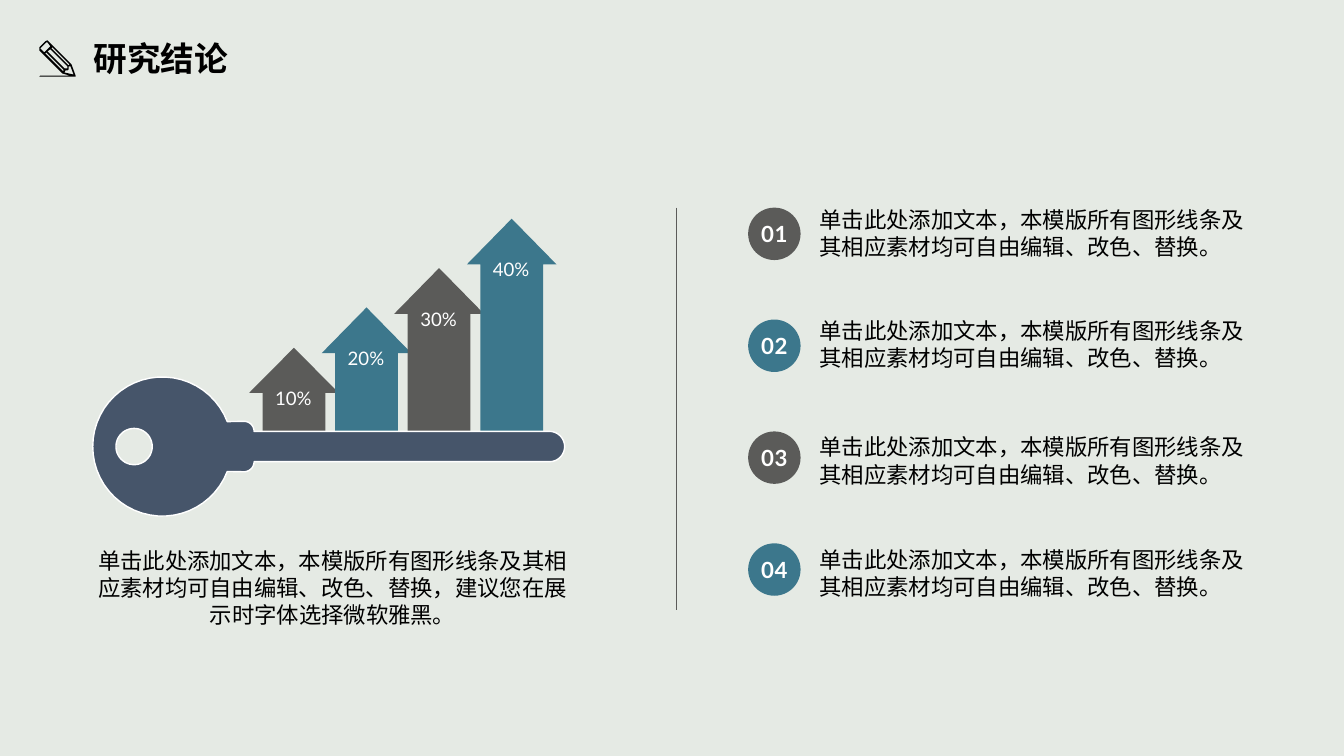
from math import cos, radians, sin

from lxml.etree import SubElement
from pptx import Presentation
from pptx.dml.color import RGBColor
from pptx.enum.shapes import MSO_CONNECTOR, MSO_SHAPE
from pptx.enum.text import MSO_ANCHOR, PP_ALIGN
from pptx.oxml.ns import qn
from pptx.util import Inches, Pt

GRAY, TEAL, NAVY = "5B5B59", "3C778C", "46556A"
CJK = "Noto Sans CJK SC"

prs = Presentation()
prs.slide_width, prs.slide_height = Inches(13.33), Inches(7.5)
slide = prs.slides.add_slide(prs.slide_layouts[6])
shapes = slide.shapes


def rgb(hex_color):
    return RGBColor.from_string(hex_color)


def write(shape, text, size, font=CJK, color="000000", bold=False, align=PP_ALIGN.LEFT,
          anchor=MSO_ANCHOR.TOP, inset=(0, 0), line_spacing=None, tracking=0):
    """Fill a shape with one formatted paragraph; inset is horizontal, vertical in inches."""
    frame = shape.text_frame
    frame.word_wrap = True
    frame.vertical_anchor = anchor
    frame.margin_left = frame.margin_right = Inches(inset[0])
    frame.margin_top = frame.margin_bottom = Inches(inset[1])
    paragraph = frame.paragraphs[0]
    paragraph.alignment = align
    if line_spacing:
        paragraph.line_spacing = Pt(line_spacing)
    run = paragraph.add_run()
    run.text = text
    run.font.size, run.font.name, run.font.bold = Pt(size), font, bold
    run.font.color.rgb = rgb(color)
    properties = run.font._element
    SubElement(properties, qn("a:ea")).set("typeface", font)
    if tracking:
        properties.set("spc", str(round(tracking * 100)))


slide.background.fill.solid()
slide.background.fill.fore_color.rgb = rgb("E5EAE4")

# Rising arrows that form the teeth of the key
shaft_top = 4.33
for i, height in enumerate([0.88, 1.28, 1.67, 2.16]):
    left, top = 2.47 + 0.72 * i, shaft_top - height
    arrow = shapes.add_shape(MSO_SHAPE.UP_ARROW, Inches(left), Inches(top),
                             Inches(0.89), Inches(height))
    arrow.adjustments[0], arrow.adjustments[1] = 0.7, 0.51
    arrow.shadow.inherit = False
    arrow.fill.solid()
    arrow.fill.fore_color.rgb = rgb((GRAY, TEAL)[i % 2])
    arrow.line.fill.background()
    percent = shapes.add_textbox(Inches(left + 0.24), Inches(top + 0.39),
                                 Inches(0.4), Inches(0.22))
    write(percent, f"{10 * (i + 1)}%", 13.3, font="Lato", color="FFFFFF", align=PP_ALIGN.CENTER)

# Key and pencil: each is an outer contour followed by its holes
key_arcs = [  # centre x, centre y, radius, start and end angle
    [(2.42, 4.28, 0.1, 0, -90), (1.61, 4.43, 0.69, -21, -339),
     (2.42, 4.58, 0.1, 90, 0), (5.45, 4.43, 0.15, 90, -90)],
    [(1.33, 4.43, 0.18, 0, 360)],
]
steps = 48
key = [[(x + r * cos(radians(a + (b - a) * n / steps)),
         y + r * sin(radians(a + (b - a) * n / steps)))
        for x, y, r, a, b in arcs for n in range(steps + 1)] for arcs in key_arcs]
pencil = [
    [(0.74, 0.76), (0.75, 0.76), (0.75, 0.75), (0.71, 0.64), (0.48, 0.41), (0.47, 0.4),
     (0.45, 0.41), (0.39, 0.47), (0.39, 0.5), (0.43, 0.54), (0.62, 0.73), (0.69, 0.75),
     (0.4, 0.75), (0.39, 0.76)],
    [(0.73, 0.74), (0.64, 0.72), (0.65, 0.7), (0.67, 0.7), (0.68, 0.69), (0.68, 0.66), (0.7, 0.66)],
    [(0.52, 0.47), (0.69, 0.64), (0.68, 0.65), (0.51, 0.48)],
    [(0.5, 0.49), (0.67, 0.66), (0.67, 0.68), (0.64, 0.68), (0.47, 0.51)],
    [(0.4, 0.48), (0.46, 0.42), (0.47, 0.42), (0.5, 0.46), (0.44, 0.52)],
    [(0.46, 0.52), (0.63, 0.69), (0.63, 0.71), (0.45, 0.53)],
]
for contours, fill, outline in [(key, NAVY, "FFFFFF"), (pencil, "000000", None)]:
    builder = None
    for contour in contours:
        points = [(Inches(x), Inches(y)) for x, y in contour]
        if builder is None:
            builder = shapes.build_freeform(*points[0])
        else:
            builder.move_to(*points[0])
        builder.add_line_segments(points[1:], close=True)
    drawing = builder.convert_to_shape()
    drawing.shadow.inherit = False
    drawing.fill.solid()
    drawing.fill.fore_color.rgb = rgb(fill)
    if outline:
        drawing.line.color.rgb = rgb(outline)
        drawing.line.width = Pt(1)
    else:
        drawing.line.fill.background()

divider = shapes.add_connector(MSO_CONNECTOR.STRAIGHT, Inches(6.71), Inches(2.06),
                               Inches(6.71), Inches(6.05))
divider.line.color.rgb = rgb(GRAY)
divider.line.width = Pt(0.75)
SubElement(divider._element.spPr, qn("a:effectLst"))

# Numbered conclusions
for i, text_top in enumerate([1.97, 3.07, 4.23, 5.35]):
    badge = shapes.add_shape(MSO_SHAPE.OVAL, Inches(7.42), Inches(2.06 + 1.11 * i),
                             Inches(0.52), Inches(0.52))
    badge.shadow.inherit = False
    badge.fill.solid()
    badge.fill.fore_color.rgb = rgb((GRAY, TEAL)[i % 2])
    badge.line.fill.background()
    write(badge, f"{i + 1:02}", 15.9, font="Lato", color="FFFFFF", bold=True,
          align=PP_ALIGN.CENTER, anchor=MSO_ANCHOR.MIDDLE, tracking=0.3)
    conclusion = shapes.add_textbox(Inches(8), Inches(text_top), Inches(4.56), Inches(0.61))
    write(conclusion, "单击此处添加文本，本模版所有图形线条及其相应素材均可自由编辑、改色、替换。",
          16, inset=(0.13, 0.07), line_spacing=19.3)

summary = shapes.add_textbox(Inches(0.77), Inches(5.36), Inches(5.06), Inches(0.98))
write(summary, "单击此处添加文本，本模版所有图形线条及其相应素材均可自由编辑、改色、替换，"
      "建议您在展示时字体选择微软雅黑。", 16, align=PP_ALIGN.CENTER,
      inset=(0.13, 0.07), line_spacing=19.3)

title = shapes.add_textbox(Inches(0.83), Inches(0.33), Inches(2.53), Inches(0.5))
write(title, "研究结论", 24, bold=True, anchor=MSO_ANCHOR.MIDDLE, inset=(0.1, 0))

prs.save("out.pptx")
